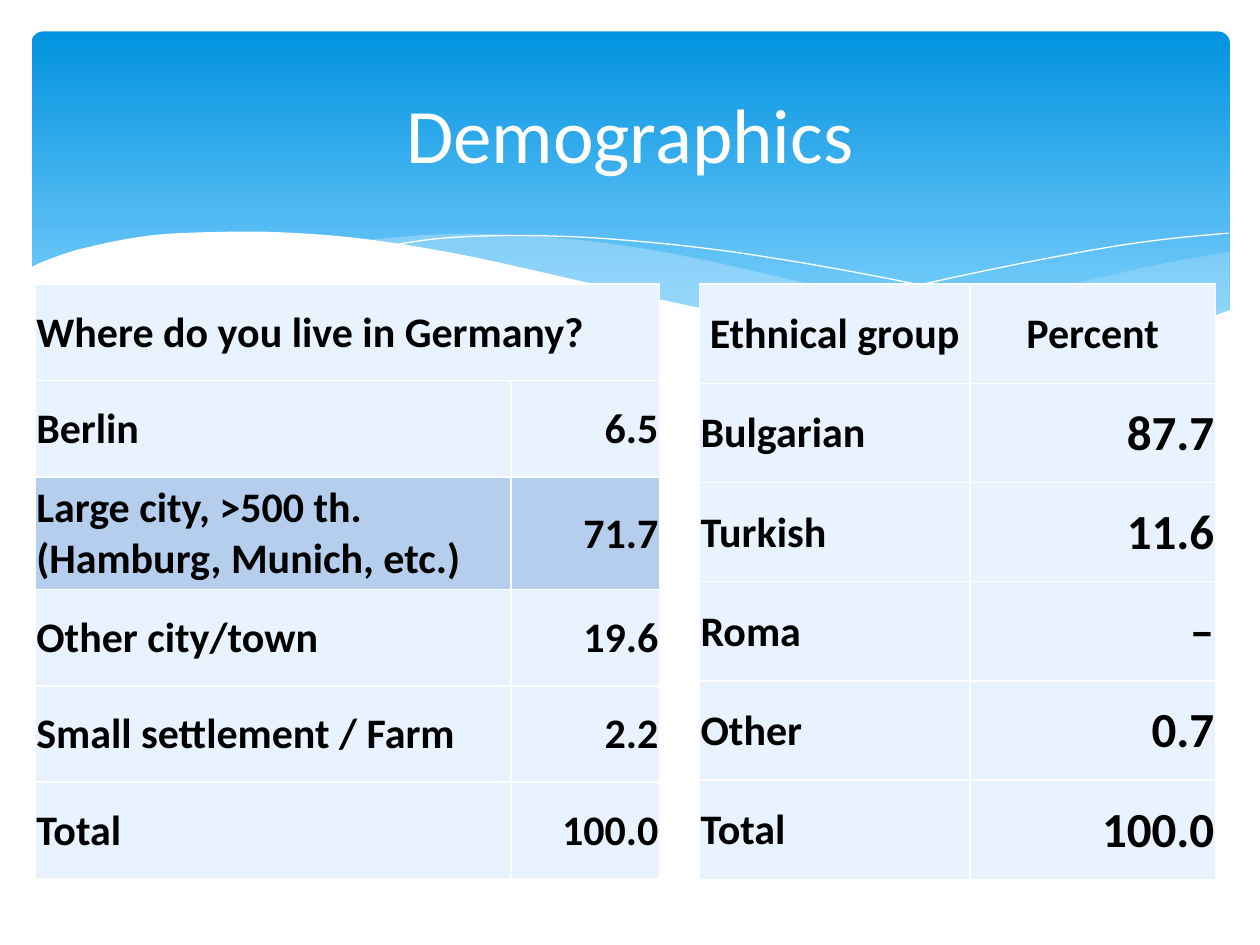
from lxml import etree
from pptx import Presentation
from pptx.dml.color import RGBColor
from pptx.enum import shapes, text
from pptx.oxml import ns
from pptx.util import Pt

FONT = "Calibri"
PALE, DEEP, WHITE, BLACK = "E8F3FF", "B5CEED", "FFFFFF", "000000"
LEFT, MID, RIGHT = text.PP_ALIGN.LEFT, text.PP_ALIGN.CENTER, text.PP_ALIGN.RIGHT

RIGHT_TOP = [(684.7, 126), (645, 133), (602, 142.6), (543, 156), (490, 167), (458, 173)]
RIGHT_LOW = [(458, 173), (509, 179), (560, 182), (603, 180), (639, 174), (684.7, 160)]
LEFT_TOP = [(625, 178.6), (563, 169), (490, 155), (435, 142), (371.5, 128),
            (317, 119.5), (269, 116), (230, 116), (188, 119.5)]
LEFT_LOW = [(188, 119.5), (242.6, 128), (305, 142), (389.5, 160.6), (461, 173.5),
            (520.6, 180.7), (571, 182), (625, 178.6)]
FALL = [(204.5, 122.4), (236, 118), (281.5, 116.6), (334, 118.8), (401, 126),
        (482, 139.7), (554, 155.5), (635, 177.8)]
RISE = [(423.4, 167), (482, 151), (541, 137.5), (605.5, 125), (647, 118.8), (684, 115.2)]
CREST = [(685.4, 159), (651.6, 170.6), (612, 178.6), (564.5, 181.4), (504.7, 177.8),
         (432.7, 167.8), (363, 154), (304, 140.4), (245, 127.4), (192, 118.8),
         (147.6, 115), (109.4, 114.5), (67.7, 116.6), (30, 123.8), (8, 131), (-1.4, 135.4)]
BASE = [(-1.4, 219), (685.4, 219)]


def rgb(code):
    return RGBColor.from_string(code)


def assign(item, **vals):
    for key, val in vals.items():
        setattr(item, key, val)


def style(para, size, color, bold, align):
    para.alignment = align
    assign(para.font, name=FONT, size=Pt(size), bold=bold)
    para.font.color.rgb = rgb(color)


def smooth(knots, steps=6):
    ends = [knots[0], *knots, knots[-1]]
    out = [knots[0]]
    for a, b, c, d in zip(ends, ends[1:], ends[2:], ends[3:]):
        for n in range(1, steps + 1):
            t = n / steps
            out.append(tuple(
                (2 * q + (r - p) * t + (2 * p - 5 * q + 4 * r - s) * t ** 2
                 + (3 * q - p - 3 * r + s) * t ** 3) / 2
                for p, q, r, s in zip(a, b, c, d)))
    return out


def wave(slide, box, dots, fill=None, alpha=100):
    spots = [(Pt(box[0] + x), Pt(box[1] + y)) for x, y in dots]
    pen = slide.shapes.build_freeform(*spots[0])
    pen.add_line_segments(spots[1:], close=fill is not None)
    form = pen.convert_to_shape()
    form.shadow.inherit = False
    if fill is None:
        form.fill.background()
        form.line.color.rgb = rgb(WHITE)
        form.line.width = Pt(0)
        return
    form.line.fill.background()
    form.fill.solid()
    form.fill.fore_color.rgb = rgb(fill)
    if alpha < 100:
        tint = form.fill._xPr.find(".//" + ns.qn("a:srgbClr"))
        etree.SubElement(tint, ns.qn("a:alpha")).set("val", str(alpha * 1000))


def banner(slide, box):
    panel = slide.shapes.add_shape(
        shapes.MSO_SHAPE.ROUNDED_RECTANGLE, *map(Pt, box))
    panel.adjustments[0] = 0.034
    panel.shadow.inherit = False
    panel.line.fill.background()
    panel.fill.gradient()
    panel.fill.gradient_angle = 270
    for stop, pos, code in zip(panel.fill.gradient_stops, (0, 0.9), ("0293E0", "83D3FE")):
        stop.position = pos
        stop.color.rgb = rgb(code)
    wave(slide, box, smooth(RIGHT_TOP) + smooth(RIGHT_LOW), "C6E7FC", 29)
    wave(slide, box, smooth(LEFT_TOP) + smooth(LEFT_LOW), "C6E7FC", 40)
    wave(slide, box, smooth(FALL))
    wave(slide, box, smooth(RISE))
    wave(slide, box, smooth(CREST) + BASE, WHITE)


def heading(slide, box, words):
    title = slide.shapes.title
    slide.shapes._spTree.append(title._element)
    assign(title, **dict(zip(("left", "top", "width", "height"), map(Pt, box))))
    title.text_frame.text = words
    title.text_frame.vertical_anchor = text.MSO_ANCHOR.MIDDLE
    style(title.text_frame.paragraphs[0], 44, WHITE, False, MID)


def edge(cell):
    props = cell._tc.get_or_add_tcPr()
    for side in ("lnL", "lnR", "lnT", "lnB"):
        line = etree.SubElement(props, ns.qn("a:" + side), w=str(Pt(1)))
        fill = etree.SubElement(line, ns.qn("a:solidFill"))
        etree.SubElement(fill, ns.qn("a:srgbClr"), val=WHITE)


def grid(slide, box, cols, highs, rows, head, size, mark=None):
    table = slide.shapes.add_table(len(rows), len(cols), *map(Pt, box)).table
    for col, wide in zip(table.columns, cols):
        col.width = Pt(wide)
    for r, (row, high) in enumerate(zip(rows, highs)):
        table.rows[r].height = Pt(high)
        for c, words in enumerate(row):
            cell = table.cell(r, c)
            assign(cell, text=words, vertical_anchor=text.MSO_ANCHOR.MIDDLE,
                   margin_left=Pt(0.75), margin_right=Pt(0.75),
                   margin_top=Pt(0.75), margin_bottom=Pt(0))
            edge(cell)
            cell.fill.solid()
            cell.fill.fore_color.rgb = rgb(DEEP if r == mark else PALE)
            align = head if r == 0 else (LEFT, RIGHT)[c]
            for para in cell.text_frame.paragraphs:
                style(para, size if r and c else 24, BLACK, True, align)
    return table


def main():
    deck = Presentation()
    assign(deck, slide_width=Pt(720), slide_height=Pt(540))
    slide = deck.slides.add_slide(deck.slide_layouts[5])
    banner(slide, (18, 18, 684.7, 194.4))
    heading(slide, (36, 26.6, 648, 98.6), "Demographics")
    homes = [("Where do you live in Germany?", ""), ("Berlin", "6.5"),
             ("Large city, >500 th.\n(Hamburg, Munich, etc.)", "71.7"),
             ("Other city/town", "19.6"), ("Small settlement / Farm", "2.2"),
             ("Total", "100.0")]
    highs = [64.4 if n == 2 else 55.1 for n in range(6)]
    table = grid(slide, (20, 162.3, 357, 340), (272, 85), highs, homes, LEFT, 24, 2)
    table.cell(0, 0).merge(table.cell(0, 1))
    groups = [("Ethnical group", "Percent"), ("Bulgarian", "87.7"), ("Turkish", "11.6"),
              ("Roma", "–"), ("Other", "0.7"), ("Total", "100.0")]
    grid(slide, (399.6, 162.3, 295, 340), (154.7, 140.3), [56.7] * 6, groups, MID, 28)
    deck.save("out.pptx")


if __name__ == "__main__":
    main()
